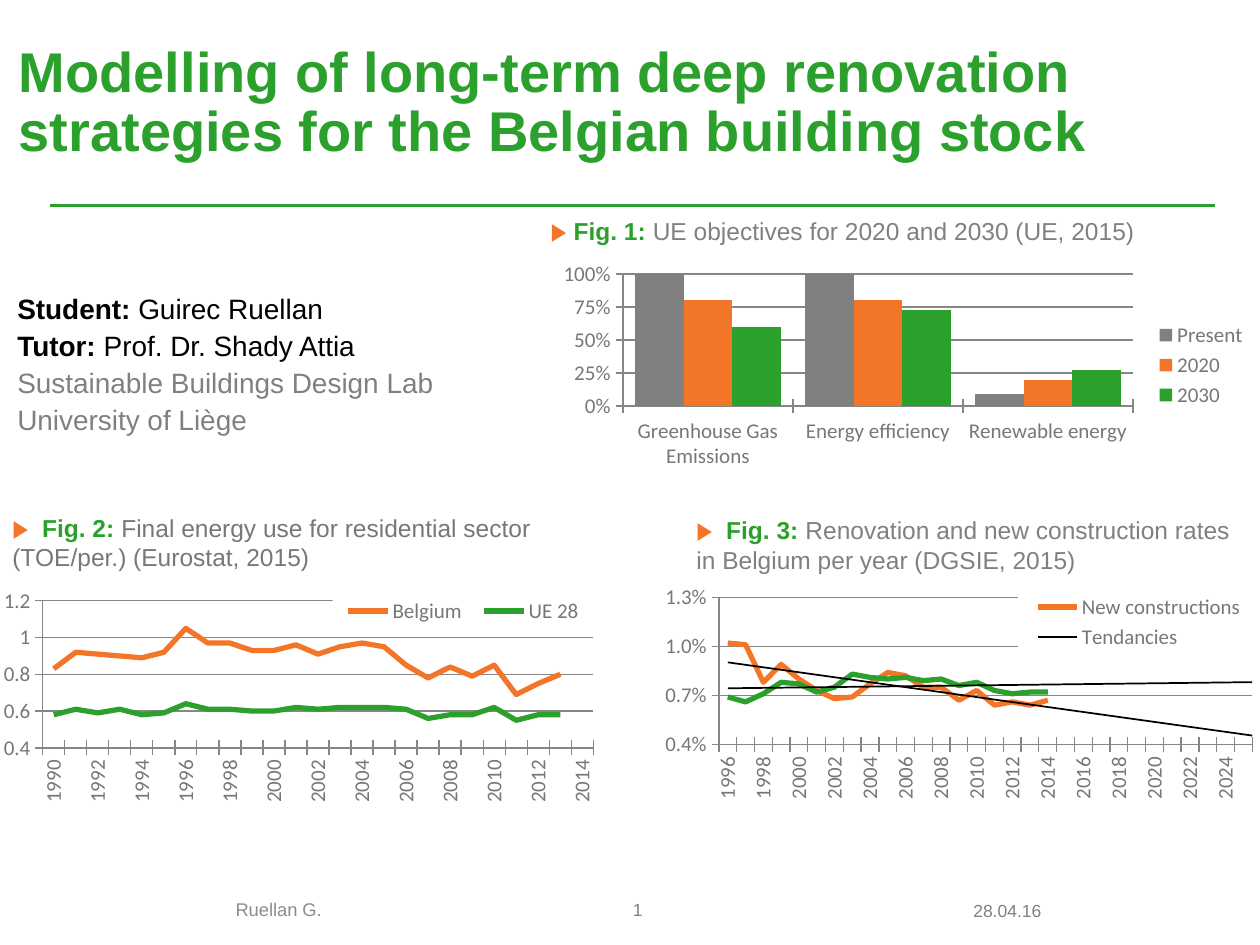
"""Builds a slide on renovation strategies for the Belgian building stock, with three charts."""
import pptx
import pptx.chart.data
import pptx.dml.color
import pptx.enum.chart
import pptx.enum.shapes
import pptx.enum.text
import pptx.oxml
import pptx.oxml.ns
import pptx.util

Cm = pptx.util.Cm
Pt = pptx.util.Pt
qn = pptx.oxml.ns.qn
ALIGN = pptx.enum.text.PP_ALIGN
CHART = pptx.enum.chart.XL_CHART_TYPE
NAMESPACES = pptx.oxml.ns.nsdecls("c", "a")
COLORS = {"green": "2CA02C", "orange": "F37628", "gray": "808080", "label": "777777",
          "footer": "8C8C8C", "axis": "868686", "black": "000000"}


def add_text(place, paragraphs, size, align=ALIGN.LEFT, spacing=None):
    box = slide.shapes.add_textbox(*map(Cm, place))
    frame = box.text_frame
    frame.word_wrap = True
    for number, runs in enumerate(paragraphs):
        paragraph = frame.paragraphs[0] if number == 0 else frame.add_paragraph()
        paragraph.alignment = align
        paragraph.line_spacing = spacing
        for text, color, bold in runs:
            run = paragraph.add_run()
            run.text = text
            run.font.name = "Arial"
            run.font.size = Pt(size)
            run.font.bold = bold
            run.font.color.rgb = pptx.dml.color.RGBColor.from_string(COLORS[color])
    return frame


def set_layout(parent, index, target, bounds):
    for old in parent.findall(qn("c:layout")):
        parent.remove(old)
    x, y, width, height = bounds
    parent.insert(index, pptx.oxml.parse_xml(
        f'<c:layout {NAMESPACES}><c:manualLayout>{target}'
        f'<c:xMode val="edge"/><c:yMode val="edge"/><c:x val="{x}"/><c:y val="{y}"/>'
        f'<c:w val="{width}"/><c:h val="{height}"/></c:manualLayout></c:layout>'))


presentation = pptx.Presentation()
presentation.slide_width = Cm(25.4)
presentation.slide_height = Cm(19.05)
slide = presentation.slides.add_slide(presentation.slide_layouts[6])

add_text((15.75, 18.01, 5.49, 0.71), [[("28.04.16", "gray", False)]], 10, ALIGN.RIGHT, 1.04)
add_text((10.11, 17.98, 5.49, 0.71), [[("1", "gray", False)]], 10, ALIGN.CENTER, 1.04)

rule = slide.shapes.add_connector(pptx.enum.shapes.MSO_CONNECTOR.STRAIGHT,
                                  Cm(1), Cm(4.14), Cm(24.5), Cm(4.14))
rule.line.color.rgb = pptx.dml.color.RGBColor.from_string(COLORS["green"])
rule.line.width = Pt(1.42)
rule._element.spPr.append(pptx.oxml.parse_xml(f"<a:effectLst {NAMESPACES}/>"))

title = add_text((0.38, 0.53, 21.74, 3.15), [[(
    "Modelling of long-term deep renovation strategies for the Belgian building stock",
    "green", True)]], 32, spacing=0.88)
title.vertical_anchor = pptx.enum.text.MSO_ANCHOR.MIDDLE
title.margin_left = title.margin_right = title.margin_top = title.margin_bottom = 0

add_text((0.1, 5.69, 11.48, 3.28), [
    [("Student: ", "black", True), ("Guirec Ruellan", "black", False)],
    [("Tutor: ", "black", True), ("Prof. Dr. Shady Attia", "black", False)],
    [("Sustainable Buildings Design Lab", "gray", False)],
    [("University of Liège", "gray", False)]], 16, spacing=1.1)

charts = [
    {"type": CHART.COLUMN_CLUSTERED, "place": (11.1, 5.11, 14.3, 4.5),
     "plot": (0.102, 0.092, 0.719, 0.592), "legend": None,
     "scale": (0, 1, 0.25), "format": "0%",
     "categories": ["Greenhouse Gas Emissions", "Energy efficiency", "Renewable energy"],
     "series": [("Present", "gray", [1, 1, 0.09]),
                ("2020", "orange", [0.8, 0.8, 0.2]),
                ("2030", "green", [0.6, 0.73, 0.27])]},
    {"type": CHART.LINE, "place": (0, 11.86, 11.99, 4.5),
     "plot": (0.072, 0.055, 0.927, 0.66), "legend": (0.56, 0.03, 0.44, 0.14),
     "scale": (0.4, 1.2, 0.2), "format": "General",
     "categories": [str(year) for year in range(1990, 2015)],
     "series": [("Belgium", "orange",
                 [0.83, 0.92, 0.91, 0.9, 0.89, 0.92, 1.05, 0.97, 0.97, 0.93, 0.93, 0.96,
                  0.91, 0.95, 0.97, 0.95, 0.85, 0.78, 0.84, 0.79, 0.85, 0.69, 0.75, 0.8]),
                ("UE 28", "green",
                 [0.58, 0.61, 0.59, 0.61, 0.58, 0.59, 0.64, 0.61, 0.61, 0.6, 0.6, 0.62,
                  0.61, 0.62, 0.62, 0.62, 0.61, 0.56, 0.58, 0.58, 0.62, 0.55, 0.58, 0.58])]},
    {"type": CHART.LINE, "place": (13.41, 11.79, 11.99, 4.5),
     "plot": (0.084, 0.055, 0.903, 0.66), "legend": (0.59, 0.02, 0.41, 0.29),
     "scale": (0.004, 0.013, 0.003), "format": "0.0%", "trend": "Tendancies",
     "categories": [str(year) for year in range(1996, 2026)],
     "series": [("New constructions", "orange",
                 [0.0102, 0.0101, 0.0078, 0.0089, 0.008, 0.0073, 0.0068, 0.0069, 0.0077, 0.0084,
                  0.0082, 0.0075, 0.0075, 0.0067, 0.0073, 0.0064, 0.0066, 0.0064, 0.0067]),
                ("Renovation", "green",
                 [0.0069, 0.0066, 0.0071, 0.0078, 0.0077, 0.0072, 0.0075, 0.0083, 0.0081, 0.008,
                  0.0081, 0.0079, 0.008, 0.0076, 0.0078, 0.0073, 0.0071, 0.0072, 0.0072])]},
]

for settings in charts:
    data = pptx.chart.data.CategoryChartData(number_format=settings["format"])
    data.categories = settings["categories"]
    for name, color, values in settings["series"]:
        data.add_series(name, values + [None] * (len(settings["categories"]) - len(values)))
    chart = slide.shapes.add_chart(settings["type"], *map(Cm, settings["place"]), data).chart
    chart.has_title = False
    chart.font.name = "Calibri"
    chart.font.size = Pt(12)
    chart.font.color.rgb = pptx.dml.color.RGBColor.from_string(COLORS["label"])
    plot = chart.plots[0]
    plot.vary_by_categories = False
    set_layout(chart._chartSpace.chart.plotArea, 0, '<c:layoutTarget val="inner"/>',
               settings["plot"])

    value_axis, category_axis = chart.value_axis, chart.category_axis
    value_axis.minimum_scale, value_axis.maximum_scale, value_axis.major_unit = settings["scale"]
    value_axis.tick_labels.number_format = settings["format"]
    value_axis.tick_labels.number_format_is_linked = False
    value_axis.has_major_gridlines = True
    for line in (value_axis.format.line, category_axis.format.line,
                 value_axis.major_gridlines.format.line):
        line.color.rgb = pptx.dml.color.RGBColor.from_string(COLORS["axis"])
        line.width = Pt(0.75)
    for axis in (value_axis, category_axis):
        axis.major_tick_mark = pptx.enum.chart.XL_TICK_MARK.CROSS

    chart.has_legend = True
    legend = chart.legend
    legend.position = pptx.enum.chart.XL_LEGEND_POSITION.RIGHT
    legend.include_in_layout = settings["legend"] is not None
    if settings["legend"]:
        set_layout(legend._element, 1, "", settings["legend"])
        legend._element.find(qn("c:overlay")).addnext(pptx.oxml.parse_xml(
            f'<c:spPr {NAMESPACES}><a:solidFill><a:srgbClr val="FFFFFF"/></a:solidFill></c:spPr>'))

    for series, (name, color, values) in zip(plot.series, settings["series"]):
        rgb = pptx.dml.color.RGBColor.from_string(COLORS[color])
        if settings["type"] == CHART.COLUMN_CLUSTERED:
            series.format.fill.solid()
            series.format.fill.fore_color.rgb = rgb
            continue
        series.smooth = False
        series.format.line.color.rgb = rgb
        series.format.line.width = Pt(3)
        series.marker.style = pptx.enum.chart.XL_MARKER_STYLE.NONE
        if "trend" in settings:
            forward = len(settings["categories"]) - len(values)
            series._element.find(qn("c:cat")).addprevious(pptx.oxml.parse_xml(
                f'<c:trendline {NAMESPACES}><c:name>{settings["trend"]}</c:name>'
                f'<c:spPr><a:ln w="12700"><a:solidFill><a:srgbClr val="{COLORS["black"]}"/>'
                f'</a:solidFill></a:ln></c:spPr><c:trendlineType val="linear"/>'
                f'<c:forward val="{forward}"/><c:dispRSqr val="0"/><c:dispEq val="0"/>'
                f'</c:trendline>'))

    if settings["type"] == CHART.COLUMN_CLUSTERED:
        plot.gap_width = 50
        plot.overlap = 0
    else:
        category_axis.tick_labels.font.size = Pt(12)
        category_axis._element.find(qn("c:txPr")).find(qn("a:bodyPr")).set("rot", "-5400000")
        category_axis._element.find(qn("c:noMultiLvlLbl")).addprevious(
            pptx.oxml.parse_xml(f'<c:tickLblSkip {NAMESPACES} val="2"/>'))
    if "trend" in settings:
        legend._element.insert(1, pptx.oxml.parse_xml(
            f'<c:legendEntry {NAMESPACES}><c:idx val="3"/><c:delete val="1"/></c:legendEntry>'))

captions = [
    ((10.85, 4.24, 14.55, 0.86), "▶ ", "Fig. 1: ",
     "UE objectives for 2020 and 2030 (UE, 2015)", "gray", ALIGN.JUSTIFY),
    ((0, 10.21, 11.91, 1.45), "▶  ", "Fig. 2: ",
     "Final energy use for residential sector (TOE/per.) (Eurostat, 2015)", "label", ALIGN.LEFT),
    ((13.79, 10.26, 11.61, 1.45), "▶  ", "Fig. 3: ",
     "Renovation and new construction rates in Belgium per year (DGSIE, 2015)", "gray", ALIGN.LEFT),
]
for place, arrow, figure, text, color, align in captions:
    add_text(place, [[(arrow, "orange", True), (figure, "green", True), (text, color, False)]],
             14, align)

author = add_text((4.5, 17.98, 5.94, 0.71), [[("Ruellan G.", "footer", False)]], 10.5)
author.vertical_anchor = pptx.enum.text.MSO_ANCHOR.MIDDLE

presentation.save("out.pptx")
